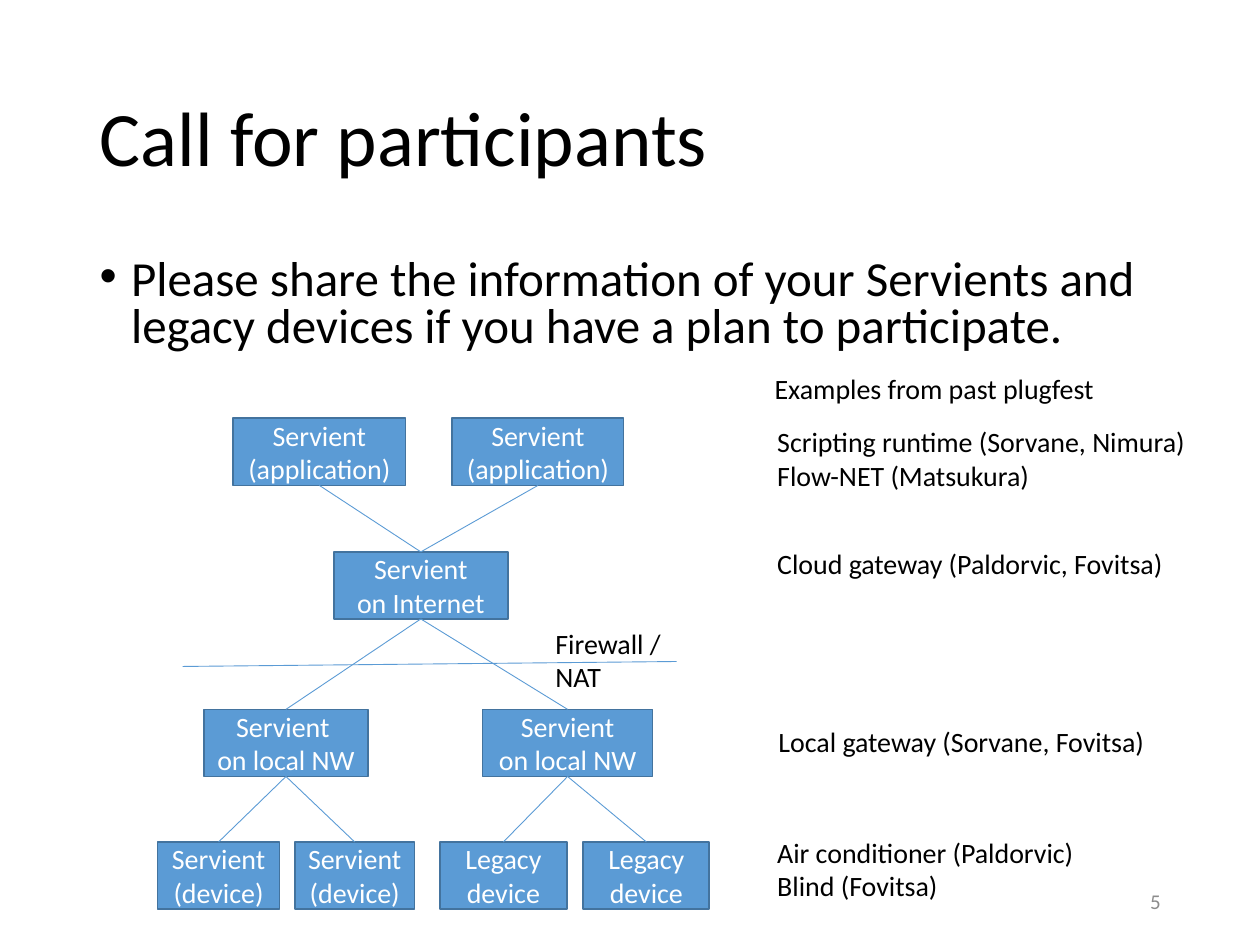
import pptx
import pptx.util
import pptx.dml.color
import pptx.enum.shapes
import pptx.enum.text
import pptx.oxml.ns
import lxml.etree

# Content: all places and sizes are percent shares of the slide
TITLE = "Call for participants"
BODY = ("Please share the information of your Servients and legacy devices "
        "if you have a plan to participate.")
TOPS = {"app": 44.27, "net": 58.4, "local": 75.07, "device": 89.1}
HIGH = 7.1
NODES = {  # name: (row, left, width, paragraphs)
    "app 1": ("app", 18.5, 13.7, ["Servient", "(application)"]),
    "app 2": ("app", 35.9, 13.6, ["Servient (application)"]),
    "cloud": ("net", 26.5, 13.8, ["Servient", "on Internet"]),
    "local 1": ("local", 16.2, 13, ["Servient ", "on local NW"]),
    "local 2": ("local", 38.3, 13.5, ["Servient", "on local NW"]),
    "device 1": ("device", 12.5, 9.7, ["Servient", "(device)"]),
    "device 2": ("device", 23.4, 9.5, ["Servient (device)"]),
    "legacy 1": ("device", 34.9, 10.1, ["Legacy device"]),
    "legacy 2": ("device", 46.3, 10, ["Legacy device"]),
}
LINKS = [
    ("app 1", "cloud"), ("app 2", "cloud"),
    ("cloud", "local 1"), ("cloud", "local 2"),
    ("local 1", "device 1"), ("local 1", "device 2"),
    ("local 2", "legacy 1"), ("local 2", "legacy 2"),
]
WALL = (14.5, 70.53, 53.7, 70)
NOTES = [  # left, top, width, height, paragraphs
    (60.5, 38.67, 27.6, 4.93, ["Examples from past plugfest"]),
    (60.7, 44.27, 35.1, 8.53, ["Scripting runtime (Sorvane, Nimura)",
                               "Flow-NET (Matsukura)"]),
    (60.7, 57.2, 33.4, 4.93, ["Cloud gateway (Paldorvic, Fovitsa)"]),
    (60.8, 76, 31.3, 4.93, ["Local gateway (Sorvane, Fovitsa)"]),
    (60.7, 87.73, 26.6, 8.53, ["Air conditioner (Paldorvic)",
                               "Blind (Fovitsa)"]),
]
LABEL = (43.1, 65.6, 12.5, 8.53, ["Firewall / NAT"])
NUMBER = (70.6, 92.67, 22.5, 5.33, ["5"])

ALIGN = pptx.enum.text.PP_ALIGN
MIDDLE = pptx.enum.text.MSO_ANCHOR.MIDDLE
BLUE = "5B9BD5"

deck = pptx.Presentation()
deck.slide_width = pptx.util.Inches(10)
deck.slide_height = pptx.util.Inches(7.5)
slide = deck.slides.add_slide(deck.slide_layouts[1])
shapes = slide.shapes


def color(code):
    return pptx.dml.color.RGBColor.from_string(code)


def place(*shares):
    """Turn x, y, x, y shares into lengths."""
    sides = (deck.slide_width, deck.slide_height) * 2
    return [round(side * share / 100) for side, share in zip(sides, shares)]


def write(frame, paras, size, code="000000", align=ALIGN.LEFT):
    for num, text in enumerate(paras):
        para = frame.add_paragraph() if num else frame.paragraphs[0]
        para.alignment = align
        run = para.add_run()
        run.text = text
        run.font.size = pptx.util.Pt(size)
        run.font.name = "Calibri"
        run.font.color.rgb = color(code)


def add_text(left, top, width, height, paras, size=16, wrap=False, **look):
    frame = shapes.add_textbox(*place(left, top, width, height)).text_frame
    frame.word_wrap = wrap
    write(frame, paras, size, **look)
    return frame


def add_line(*ends):
    line = shapes.add_connector(
        pptx.enum.shapes.MSO_CONNECTOR.STRAIGHT, *place(*ends))
    line.line.color.rgb = color(BLUE)
    line.line.width = pptx.util.Pt(0.5)
    lxml.etree.SubElement(line._element.spPr, pptx.oxml.ns.qn("a:effectLst"))
    return line


def fill_holder(holder, spot, text, size, space):
    holder.left, holder.top, holder.width, holder.height = place(*spot)
    frame = holder.text_frame
    frame.auto_size = pptx.enum.text.MSO_AUTO_SIZE.NONE
    write(frame, [text], size)
    frame.paragraphs[0].line_spacing = space
    return frame


# Title and bullet
frame = fill_holder(shapes.title, (6.9, 5.33, 86.2, 19.33), TITLE, 44, 0.9)
frame.vertical_anchor = MIDDLE
frame = fill_holder(slide.placeholders[1], (6.9, 26.67, 86.2, 11.33),
                    BODY, 28, 0.8)
para = frame.paragraphs[0]
para.space_before = pptx.util.Pt(10)
props = para._p.get_or_add_pPr()
props.set("marL", str(pptx.util.Inches(0.25)))
props.set("indent", str(pptx.util.Inches(-0.25)))

# Boxes of the tree
boxes = {}
for name, (row, left, width, paras) in NODES.items():
    box = shapes.add_shape(pptx.enum.shapes.MSO_SHAPE.RECTANGLE,
                           *place(left, TOPS[row], width, HIGH))
    box.shadow.inherit = False
    box.fill.solid()
    box.fill.fore_color.rgb = color(BLUE)
    box.line.color.rgb = color("43739E")
    box.line.width = pptx.util.Pt(1)
    frame = box.text_frame
    frame.word_wrap = True
    frame.vertical_anchor = MIDDLE
    frame.margin_left = frame.margin_right = pptx.util.Inches(0.05)
    write(frame, paras, 16, "FFFFFF", ALIGN.CENTER)
    boxes[name] = box

# Links from bottom middle to top middle, then the firewall
for upper, lower in LINKS:
    link = add_line(0, 0, 1, 1)
    link.begin_connect(boxes[upper], 2)
    link.end_connect(boxes[lower], 0)
add_line(*WALL)
add_text(*LABEL, wrap=True)

# Examples and slide number
for note in NOTES:
    add_text(*note)
frame = add_text(*NUMBER, size=12, wrap=True, code="8C8C8C", align=ALIGN.RIGHT)
frame.vertical_anchor = MIDDLE

deck.save("out.pptx")
